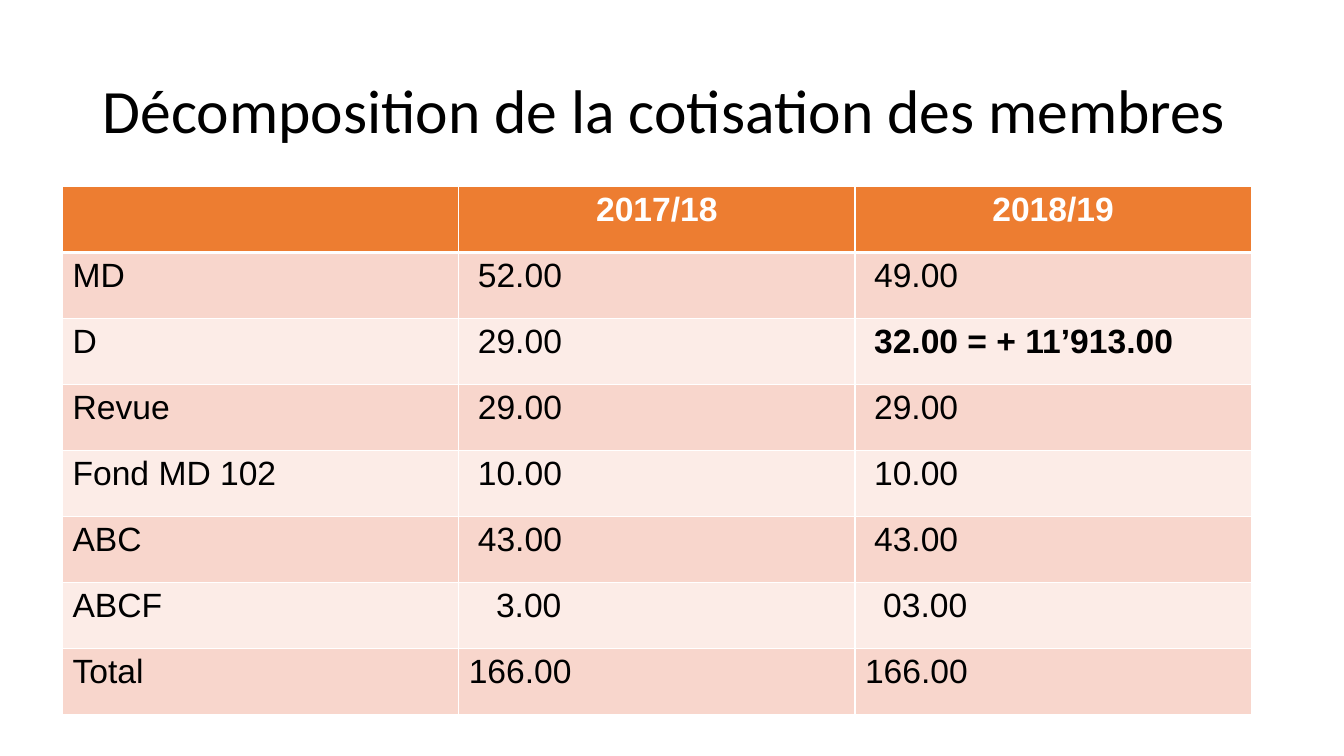
from lxml.etree import SubElement
from pptx import Presentation
from pptx.dml.color import RGBColor
from pptx.enum.text import MSO_ANCHOR, PP_ALIGN
from pptx.oxml.ns import qn
from pptx.util import Inches, Pt

WHITE, BLACK, ORANGE = "FFFFFF", "000000", "ED7D31"
BANDS = ["F8D6CC", "FCECE7"]
COLUMN_WIDTH, TABLE_HEIGHT = 3.93, 5.24
CELL_MARGIN, INDENT_STEP = 0.1, 0.09

HEADER = ["", "2017/18", "2018/19"]
# Label, then each year's amount with its indent steps
FEES = [
    ("MD", ("52.00", 1), ("49.00", 1)),
    ("D", ("29.00", 1), ("32.00 = + 11’913.00", 1)),
    ("Revue", ("29.00", 1), ("29.00", 1)),
    ("Fond MD 102", ("10.00", 1), ("10.00", 1)),
    ("ABC", ("43.00", 1), ("43.00", 1)),
    ("ABCF", ("3.00", 3), ("03.00", 2)),
    ("Total", ("166.00", 0), ("166.00", 0)),
]
HIGHLIGHT = "32.00 = + 11’913.00"


def color(value):
    return RGBColor.from_string(value)


def write(text_frame, text, font_name, size, text_color, bold=False):
    text_frame.text = text
    paragraph = text_frame.paragraphs[0]
    for run in paragraph.runs:
        run.font.name = font_name
        run.font.size = Pt(size)
        run.font.bold = bold
        run.font.color.rgb = color(text_color)
    return paragraph


def add_title(slide, text):
    shape = slide.shapes.add_textbox(Inches(0.92), Inches(0.4), Inches(11.5), Inches(1.45))
    shape.text_frame.word_wrap = True
    shape.text_frame.vertical_anchor = MSO_ANCHOR.MIDDLE
    paragraph = write(shape.text_frame, text, "Calibri", 44, BLACK)
    paragraph.line_spacing = 0.9


def set_borders(cell, widths):
    """Draw white borders; they must come before the fill in the cell properties."""
    properties = cell._tc.get_or_add_tcPr()
    for side, width in widths.items():
        line = SubElement(properties, qn(f"a:ln{side}"), w=str(Pt(width)))
        fill = SubElement(line, qn("a:solidFill"))
        SubElement(fill, qn("a:srgbClr"), val=WHITE)


def style_cell(cell, fill, top=1, bottom=1, indent=0):
    set_borders(cell, {"L": 1, "R": 1, "T": top, "B": bottom})
    cell.fill.solid()
    cell.fill.fore_color.rgb = color(fill)
    cell.margin_left = Inches(CELL_MARGIN + indent * INDENT_STEP)


def add_fee_table(slide):
    row_count, column_count = len(FEES) + 1, len(HEADER)
    table = slide.shapes.add_table(
        row_count, column_count, Inches(0.62), Inches(1.85),
        Inches(COLUMN_WIDTH * column_count), Inches(TABLE_HEIGHT)).table
    for column in table.columns:
        column.width = Inches(COLUMN_WIDTH)
    for row in table.rows:
        row.height = Inches(TABLE_HEIGHT / row_count)

    # Header row
    for column_index, year in enumerate(HEADER):
        cell = table.cell(0, column_index)
        style_cell(cell, ORANGE, bottom=3)
        paragraph = write(cell.text_frame, year, "Arial", 24, WHITE, bold=True)
        paragraph.alignment = PP_ALIGN.CENTER

    # Banded fee rows
    for row_index, (label, *amounts) in enumerate(FEES, start=1):
        band = BANDS[(row_index - 1) % 2]
        for column_index, (text, indent) in enumerate([(label, 0), *amounts]):
            cell = table.cell(row_index, column_index)
            style_cell(cell, band, top=3 if row_index == 1 else 1, indent=indent)
            write(cell.text_frame, text, "Arial", 24, BLACK, bold=text == HIGHLIGHT)


def main():
    presentation = Presentation()
    presentation.slide_width = Inches(13.33)
    presentation.slide_height = Inches(7.5)
    slide = presentation.slides.add_slide(presentation.slide_layouts[6])
    add_title(slide, "Décomposition de la cotisation des membres")
    add_fee_table(slide)
    presentation.save("out.pptx")


if __name__ == "__main__":
    main()
